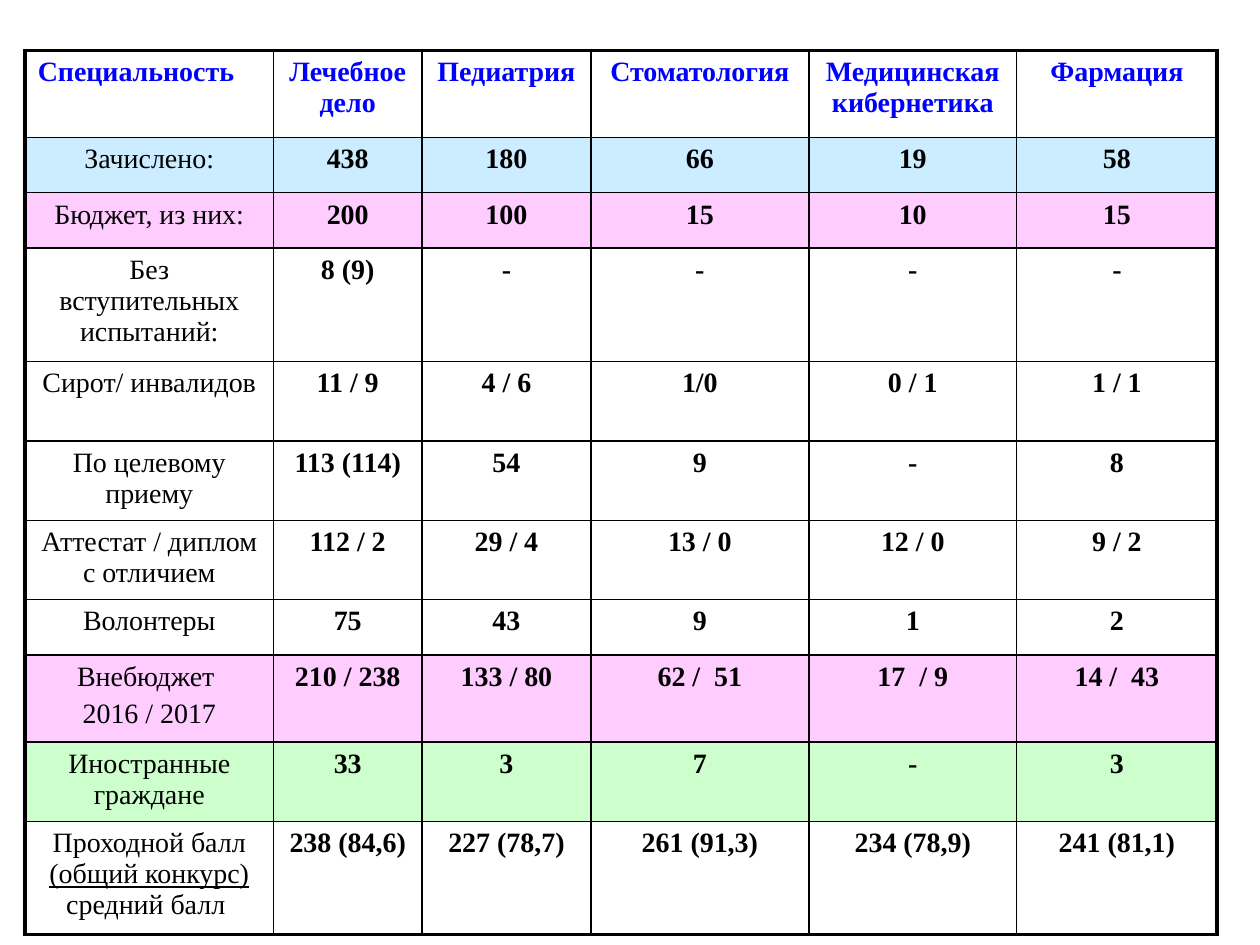
"""Builds a one-slide table of admission figures by medical speciality."""
from lxml import etree
from pptx import Presentation
from pptx.dml.color import RGBColor
from pptx.enum.text import PP_ALIGN
from pptx.oxml.ns import qn
from pptx.util import Inches, Pt

LEFT, CENTER = PP_ALIGN.LEFT, PP_ALIGN.CENTER
BLACK, BLUE = "000000", "0000FF"
SKY, PINK, GREEN = "CCECFF", "FFCCFF", "CCFFCC"
THIN, THICK = Pt(1), Pt(2.25)
UNDERLINED = "(общий конкурс)"
COLUMN_WIDTHS = [1.97, 1.18, 1.34, 1.73, 1.65, 1.59]
ROWS = [
    (0.69, None, ["Специальность", "Лечебное дело", "Педиатрия", "Стоматология",
                  "Медицинская кибернетика", "Фармация"]),
    (0.44, SKY, ["Зачислено:", "438", "180", "66", "19", "58"]),
    (0.44, PINK, ["Бюджет, из них:", "200", "100", "15", "10", "15"]),
    (0.9, None, ["Без вступительных испытаний:", "8 (9)", "-", "-", "-", "-"]),
    (0.63, None, ["Сирот/ инвалидов", "11 / 9", "4 / 6", "1/0", "0 / 1", "1 / 1"]),
    (0.63, None, ["По целевому приему", "113 (114)", "54", "9", "-", "8"]),
    (0.63, None, ["Аттестат / диплом с отличием", "112 / 2", "29 / 4", "13 / 0",
                  "12 / 0", "9 / 2"]),
    (0.44, None, ["Волонтеры", "75", "43", "9", "1", "2"]),
    (0.69, PINK, ["Внебюджет \n2016 / 2017", "210 / 238", "133 / 80", "62 /  51",
                  "17  / 9", "14 /  43"]),
    (0.63, GREEN, ["Иностранные граждане", "33", "3", "7", "-", "3"]),
    (0.9, None, ["Проходной балл (общий конкурс) средний балл ", "238 (84,6)",
                 "227 (78,7)", "261 (91,3)", "234 (78,9)", "241 (81,1)"]),
]


def paint(color_format, hex_color):
    color_format.rgb = RGBColor.from_string(hex_color)


def add_borders(cell, widths):
    properties = cell._tc.get_or_add_tcPr()
    for side, width in widths.items():
        border = etree.SubElement(properties, qn(f"a:ln{side}"), w=str(width))
        solid = etree.SubElement(border, qn("a:solidFill"))
        etree.SubElement(solid, qn("a:srgbClr"), val=BLACK)


deck = Presentation()
deck.slide_width, deck.slide_height = Inches(10), Inches(7.5)
slide = deck.slides.add_slide(deck.slide_layouts[6])

admissions = slide.shapes.add_table(
    len(ROWS), len(COLUMN_WIDTHS), Inches(0.2), Inches(0.4),
    Inches(sum(COLUMN_WIDTHS)), Inches(sum(height for height, _, _ in ROWS))).table
admissions.first_row = admissions.horz_banding = False
for column, width in zip(admissions.columns, COLUMN_WIDTHS):
    column.width = Inches(width)

last_row, last_column = len(ROWS) - 1, len(COLUMN_WIDTHS) - 1
for r, (height, band, entries) in enumerate(ROWS):
    admissions.rows[r].height = Inches(height)
    for c, entry in enumerate(entries):
        cell = admissions.cell(r, c)
        add_borders(cell, {"L": THICK if c == 0 else THIN,
                           "R": THICK if c == last_column else THIN,
                           "T": THICK if r == 0 else THIN,
                           "B": THICK if r == last_row else THIN})
        if band:
            cell.fill.solid()
            paint(cell.fill.fore_color, band)
        else:
            cell.fill.background()

        lettering = {"name": "Times New Roman", "size": Pt(16), "bold": r == 0 or c > 0}
        for number, line in enumerate(entry.split("\n")):
            if number:
                paragraph = cell.text_frame.add_paragraph()
                paragraph.space_before = Pt(3.5)
            else:
                paragraph = cell.text_frame.paragraphs[0]
            paragraph.alignment = LEFT if r == c == 0 else CENTER
            before, marked, after = line.partition(UNDERLINED)
            for words in filter(None, (before, marked, after)):
                run = paragraph.add_run()
                run.text = words
                for attribute, value in lettering.items():
                    setattr(run.font, attribute, value)
                if words == UNDERLINED:
                    run.font.underline = True
                paint(run.font.color, BLUE if r == 0 else BLACK)

deck.save("out.pptx")
